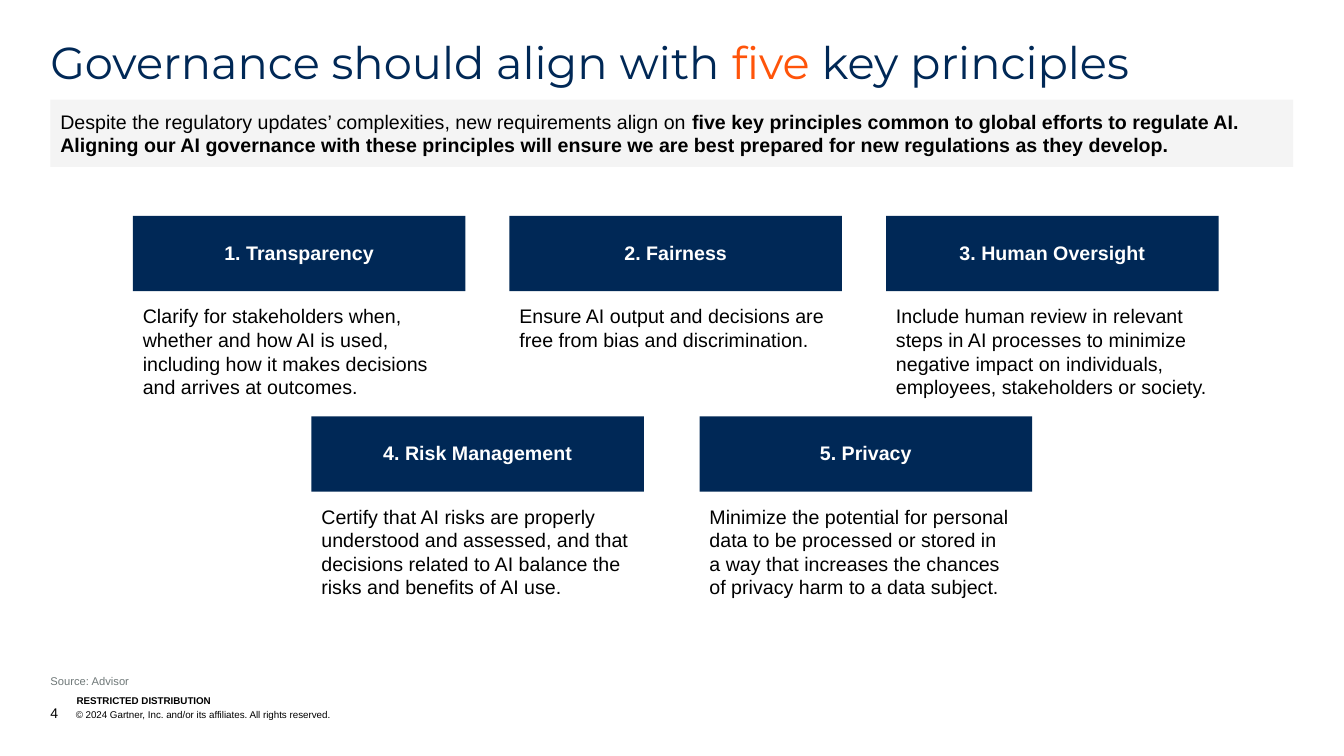
from pptx import Presentation
from pptx.dml.color import RGBColor
from pptx.enum import shapes, text
from pptx.util import Cm, Pt

NAVY = RGBColor(0x00, 0x28, 0x56)
ORANGE = RGBColor(0xFF, 0x54, 0x0A)
PALE_GRAY = RGBColor(0xF4, 0xF4, 0xF4)
SOURCE_GRAY = RGBColor(0x6F, 0x78, 0x78)
BLACK = RGBColor(0x00, 0x00, 0x00)
WHITE = RGBColor(0xFF, 0xFF, 0xFF)

MARGIN = 1.27
CONTENT_WIDTH = 31.32
CARD_WIDTH = 8.38
HEADER_HEIGHT = 1.9
BODY_OFFSET = 1.98
BODY_HEIGHT = 2.9

CARD_ROWS = [
    (3.35, 5.44, 9.49, [
        ("1. Transparency",
         "Clarify for stakeholders when, whether and how AI is used, "
         "including how it makes decisions and arrives at outcomes."),
        ("2. Fairness",
         "Ensure AI output and decisions are free from bias and discrimination."),
        ("3. Human Oversight",
         "Include human review in relevant steps in AI processes to minimize "
         "negative impact on individuals, employees, stakeholders or society."),
    ]),
    (7.85, 10.49, 9.78, [
        ("4. Risk Management",
         "Certify that AI risks are properly understood and assessed, and that "
         "decisions related to AI balance the risks and benefits of AI use."),
        ("5. Privacy",
         "Minimize the potential for personal data to be processed or stored in\n"
         "a way that increases the chances\nof privacy harm to a data subject."),
    ]),
]


def set_frame(shape, insets=(0, 0, 0, 0), anchor=text.MSO_ANCHOR.TOP):
    frame = shape.text_frame
    frame.word_wrap = True
    frame.vertical_anchor = anchor
    frame.margin_left, frame.margin_top, frame.margin_right, frame.margin_bottom = map(Cm, insets)
    paragraph = frame.paragraphs[0]
    paragraph.alignment = text.PP_ALIGN.LEFT
    return paragraph


def add_text_box(slide, left, top, width, height, **frame_options):
    shape = slide.shapes.add_textbox(Cm(left), Cm(top), Cm(width), Cm(height))
    return set_frame(shape, **frame_options)


def add_rectangle(slide, left, top, width, height, fill, **frame_options):
    shape = slide.shapes.add_shape(
        shapes.MSO_SHAPE.RECTANGLE, Cm(left), Cm(top), Cm(width), Cm(height))
    shape.shadow.inherit = False
    shape.fill.solid()
    shape.fill.fore_color.rgb = fill
    shape.line.fill.background()
    return set_frame(shape, anchor=text.MSO_ANCHOR.MIDDLE, **frame_options)


def add_run(paragraph, content, size, color=BLACK, bold=False, font="Arial"):
    for index, line in enumerate(content.split("\n")):
        if index:
            paragraph.add_line_break()
        run = paragraph.add_run()
        run.text = line
        run.font.name = font
        run.font.size = Pt(size)
        run.font.bold = bold
        run.font.color.rgb = color


def add_title(slide, left, top, width, height):
    paragraph = add_text_box(slide, left, top, width, height)
    paragraph.line_spacing = 0.9
    for content, color in (("Governance should align with ", NAVY),
                           ("five", ORANGE), (" key principles", NAVY)):
        add_run(paragraph, content, 32, color, font="Montserrat")


def add_summary(slide, left, top, width, height):
    paragraph = add_rectangle(slide, left, top, width, height, PALE_GRAY,
                              insets=(0.25, 0.25, 1.22, 0.25))
    add_run(paragraph, "Despite the regulatory updates’ complexities, "
                       "new requirements align on ", 14)
    add_run(paragraph, "five key principles common to global efforts to regulate AI. "
                       "Aligning our AI governance with these principles will ensure "
                       "we are best prepared for new regulations as they develop.",
            14, bold=True)


def add_card(slide, left, top, width, heading, description):
    header = add_rectangle(slide, left, top, width, HEADER_HEIGHT, NAVY,
                           insets=(0.25, 0.2, 0.25, 0.25))
    header.alignment = text.PP_ALIGN.CENTER
    add_run(header, heading, 14, WHITE, bold=True)
    body = add_text_box(slide, left, top + BODY_OFFSET, width, BODY_HEIGHT,
                        insets=(0.25, 0.25, 0.25, 0.25))
    add_run(body, description, 14)


def add_footer(slide, left, top, width):
    bottom = text.MSO_ANCHOR.BOTTOM
    source = add_text_box(slide, left, top, width, 0.61,
                          insets=(0, 0.25, 0, 0), anchor=bottom)
    add_run(source, "Source: Advisor", 8, SOURCE_GRAY)

    notice = add_text_box(slide, left + 0.66, top + 0.79, 6.43, 0.3, anchor=bottom)
    add_run(notice, "RESTRICTED DISTRIBUTION", 7, bold=True)

    copyright_line = add_text_box(slide, left, top + 1.04, width, 0.43, anchor=bottom)
    properties = copyright_line._p.get_or_add_pPr()
    properties.set("marL", str(Cm(0.64)))
    properties.set("indent", str(-Cm(0.64)))
    add_run(copyright_line, "4", 10)
    add_run(copyright_line,
            "\t© 2024 Gartner, Inc. and/or its affiliates. All rights reserved.", 7)


def main():
    presentation = Presentation()
    presentation.slide_width = Cm(33.87)
    presentation.slide_height = Cm(19.05)
    slide = presentation.slides.add_slide(presentation.slide_layouts[6])

    add_title(slide, MARGIN, 1.02, CONTENT_WIDTH, 1.24)
    add_summary(slide, MARGIN, 2.51, CONTENT_WIDTH, 1.7)
    for left, top, pitch, cards in CARD_ROWS:
        for column, (heading, description) in enumerate(cards):
            add_card(slide, left + column * pitch, top, CARD_WIDTH, heading, description)
    add_footer(slide, MARGIN, 16.71, 20.2)

    presentation.save("out.pptx")


if __name__ == "__main__":
    main()
